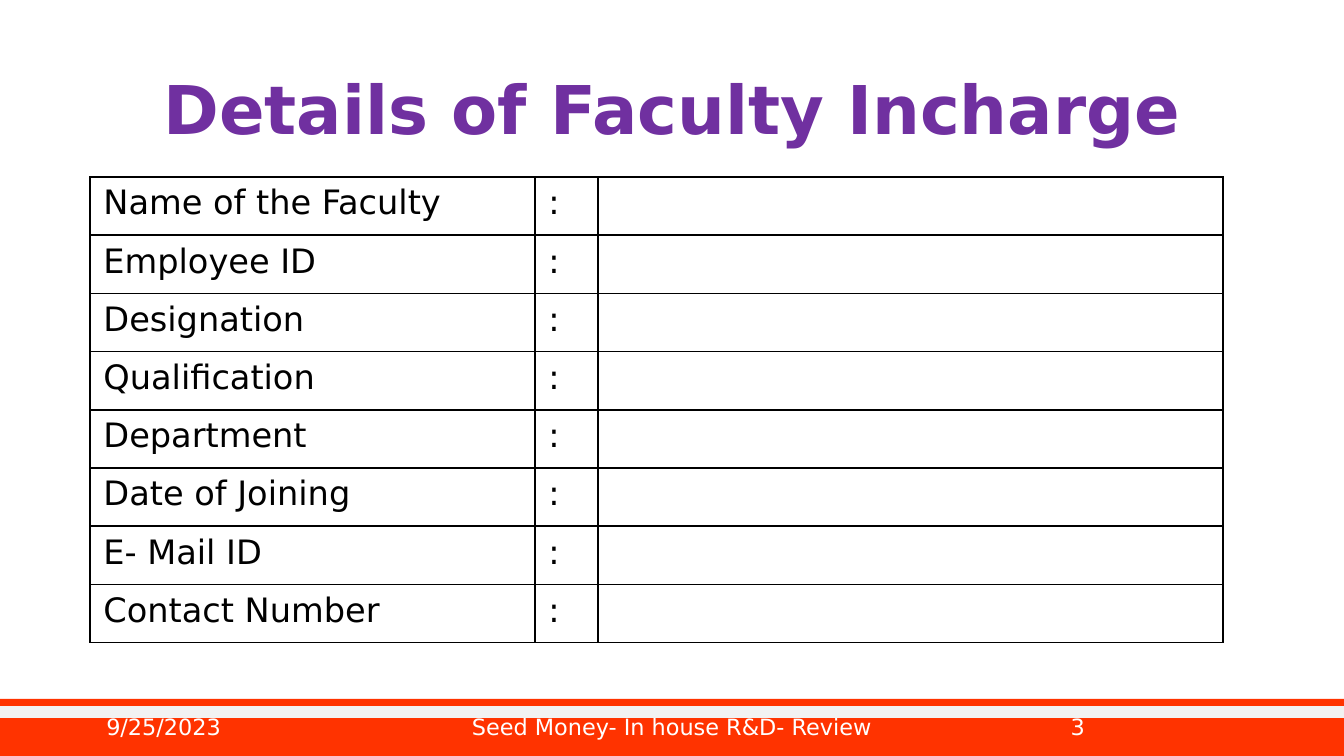
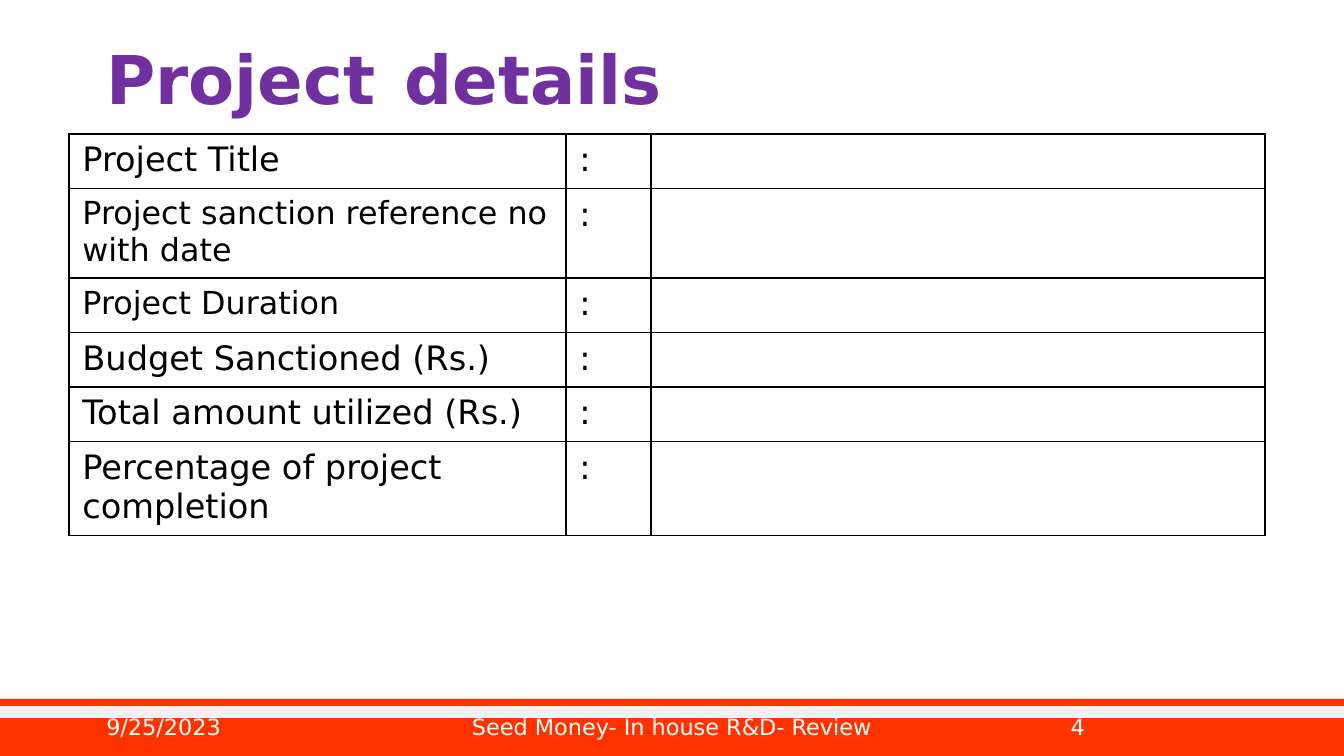
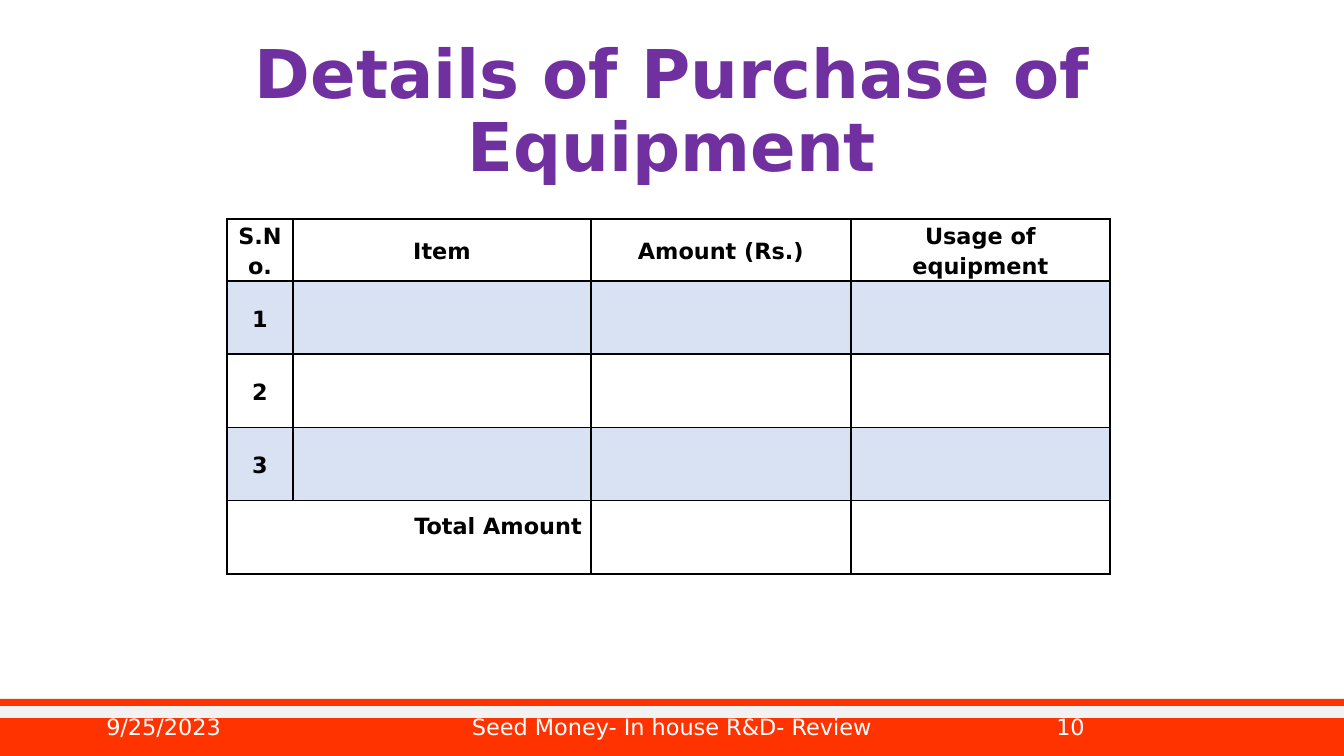
from lxml import etree
from pptx import Presentation
from pptx.dml.color import RGBColor
from pptx.enum.shapes import MSO_CONNECTOR, MSO_SHAPE
from pptx.enum.text import MSO_ANCHOR, PP_ALIGN
from pptx.oxml.ns import qn
from pptx.util import Emu, Pt

LEFT, CENTER, RIGHT = PP_ALIGN.LEFT, PP_ALIGN.CENTER, PP_ALIGN.RIGHT
TOP, MIDDLE = MSO_ANCHOR.TOP, MSO_ANCHOR.MIDDLE
RECTANGLE, STRAIGHT = MSO_SHAPE.RECTANGLE, MSO_CONNECTOR.STRAIGHT

SCALE = 914400 / 134.4  # EMU in one px
WIDTH, HEIGHT = 1344, 756
FONT = "DejaVu Sans"
BLACK, WHITE = "000000", "FFFFFF"
PURPLE, ORANGE, PALE, BLUE = "7030A0", "FF3300", "F2F2F2", "4472C4"
TITLE_SIZE, BODY_SIZE, SMALL_SIZE = 36, 18, 12

# Content
DATE = "9/25/2023"
FOOTER = "Seed Money- In house R&D- Review"

FACULTY = {
    "title": [("Details of Faculty Incharge", TITLE_SIZE)],
    "title_height": 146, "align": CENTER, "number": 3,
    "table": (90, 177), "columns": (445, 63, 625), "rows_height": 466,
    "fields": [(label, BODY_SIZE) for label in (
        "Name of the Faculty", "Employee ID", "Designation", "Qualification",
        "Department", "Date of Joining", "E- Mail ID", "Contact Number")],
}
PROJECT = {
    "title": [("Project", TITLE_SIZE), (" ", 45), ("details", TITLE_SIZE)],
    "title_height": 74, "align": LEFT, "number": 4,
    "table": (69, 134), "columns": (497, 85, 614), "rows_height": 327,
    "fields": [
        ("Project Title", BODY_SIZE),
        ("Project sanction reference no with date", 17),
        ("Project Duration", 17),
        ("Budget Sanctioned (Rs.)", BODY_SIZE),
        ("Total amount utilized (Rs.)", BODY_SIZE),
        ("Percentage of project completion", BODY_SIZE),
    ],
}
EQUIPMENT = {
    "title": [("Details of Purchase of Equipment", TITLE_SIZE)],
    "title_height": 146, "align": CENTER, "number": 10,
    "table": (227, 219), "columns": (66, 298, 260, 259),
    "header_height": 60, "rows_height": 293,
    "header": ["S.No.", "Item", "Amount (Rs.)", "Usage of equipment"],
    "items": ["1", "2", "3"],
    "total": "Total Amount",
}


def px(length):
    return Emu(round(length * SCALE))


def color(value):
    return RGBColor.from_string(value)


def style(run, size, ink, bold=False):
    run.font.name = FONT
    run.font.size = Pt(size)
    run.font.bold = bold
    run.font.color.rgb = color(ink)


def add_text(slide, box, runs, ink, align, bold=False):
    shape = slide.shapes.add_textbox(*map(px, box))
    frame = shape.text_frame
    frame.word_wrap = True
    frame.vertical_anchor = MIDDLE
    paragraph = frame.paragraphs[0]
    paragraph.alignment = align
    for text, size in runs:
        run = paragraph.add_run()
        run.text = text
        style(run, size, ink, bold)
    return paragraph


def add_frame(presentation, page):
    """Start a slide with its band, title and footer."""
    slide = presentation.slides.add_slide(presentation.slide_layouts[6])
    band = slide.shapes.add_shape(RECTANGLE, px(-3), px(699), px(WIDTH + 3), px(HEIGHT - 699))
    band.shadow.inherit = False
    band.fill.solid()
    band.fill.fore_color.rgb = color(ORANGE)
    band.line.fill.background()

    stripe = slide.shapes.add_connector(STRAIGHT, px(-3), px(712), px(WIDTH), px(712))
    stripe.line.color.rgb = color(PALE)
    stripe.line.width = Pt(6)
    etree.SubElement(stripe._element.spPr, qn("a:effectLst"))

    title = add_text(slide, (93, 40, 1158, page["title_height"]), page["title"],
                     PURPLE, page["align"], bold=True)
    title.line_spacing = 0.9

    for left, width, text, align in ((93, 302, DATE, LEFT),
                                     (445, 454, FOOTER, CENTER),
                                     (949, 149, str(page["number"]), RIGHT)):
        add_text(slide, (left, 712, width, 29), [(text, SMALL_SIZE)], WHITE, align)
    return slide


def add_borders(cell):
    properties = cell._tc.get_or_add_tcPr()
    for side in ("a:lnL", "a:lnR", "a:lnT", "a:lnB"):
        line = etree.SubElement(properties, qn(side), w=str(Pt(1)))
        fill = etree.SubElement(line, qn("a:solidFill"))
        etree.SubElement(fill, qn("a:srgbClr"), val=BLACK)


def add_grid(slide, page, heights):
    """Add an empty, unfilled table with black borders."""
    columns = page["columns"]
    left, top = page["table"]
    table = slide.shapes.add_table(len(heights), len(columns), px(left), px(top),
                                   px(sum(columns)), px(sum(heights))).table
    table.first_row = table.horz_banding = False
    for column, width in zip(table.columns, columns):
        column.width = px(width)
    for row, height in zip(table.rows, heights):
        row.height = px(height)
        for cell in row.cells:
            add_borders(cell)
            cell.fill.background()
    return table


def write_cell(cell, text, size, bold=False):
    cell.text_frame.text = text
    paragraph = cell.text_frame.paragraphs[0]
    style(paragraph.runs[0], size, BLACK, bold)
    return paragraph


def write_bold_cell(cell, text, align=CENTER, anchor=MIDDLE, spacing=1.15):
    cell.margin_left = cell.margin_right = px(9)
    cell.margin_top = cell.margin_bottom = 0
    cell.vertical_anchor = anchor
    paragraph = write_cell(cell, text, SMALL_SIZE, bold=True)
    paragraph.alignment = align
    paragraph.line_spacing = spacing
    paragraph.space_after = Pt(10)


def shade(cell):
    cell.fill.solid()
    cell.fill.fore_color.rgb = color(BLUE)
    tint = cell._tc.tcPr.find(qn("a:solidFill")).find(qn("a:srgbClr"))
    etree.SubElement(tint, qn("a:alpha"), val="20000")


def build_form(presentation, page):
    """Label, colon and an empty field in each row."""
    slide = add_frame(presentation, page)
    fields = page["fields"]
    table = add_grid(slide, page, [page["rows_height"] / len(fields)] * len(fields))
    for row, (label, size) in enumerate(fields):
        write_cell(table.cell(row, 0), label, size)
        write_cell(table.cell(row, 1), ":", BODY_SIZE)


def build_purchases(presentation, page):
    """Header, numbered items on alternate shading, and a total."""
    slide = add_frame(presentation, page)
    items = page["items"]
    total_row = len(items) + 1
    row_height = page["rows_height"] / total_row
    table = add_grid(slide, page, [page["header_height"]] + [row_height] * total_row)
    for column, heading in enumerate(page["header"]):
        write_bold_cell(table.cell(0, column), heading)
    for row, item in enumerate(items, start=1):
        write_bold_cell(table.cell(row, 0), item)
        if row % 2:
            for cell in table.rows[row].cells:
                shade(cell)
    total = table.cell(total_row, 0)
    total.merge(table.cell(total_row, 1))
    write_bold_cell(total, page["total"], RIGHT, TOP, 1.5)


def main():
    presentation = Presentation()
    presentation.slide_width, presentation.slide_height = px(WIDTH), px(HEIGHT)
    build_form(presentation, FACULTY)
    build_form(presentation, PROJECT)
    build_purchases(presentation, EQUIPMENT)
    presentation.save("out.pptx")


if __name__ == "__main__":
    main()
